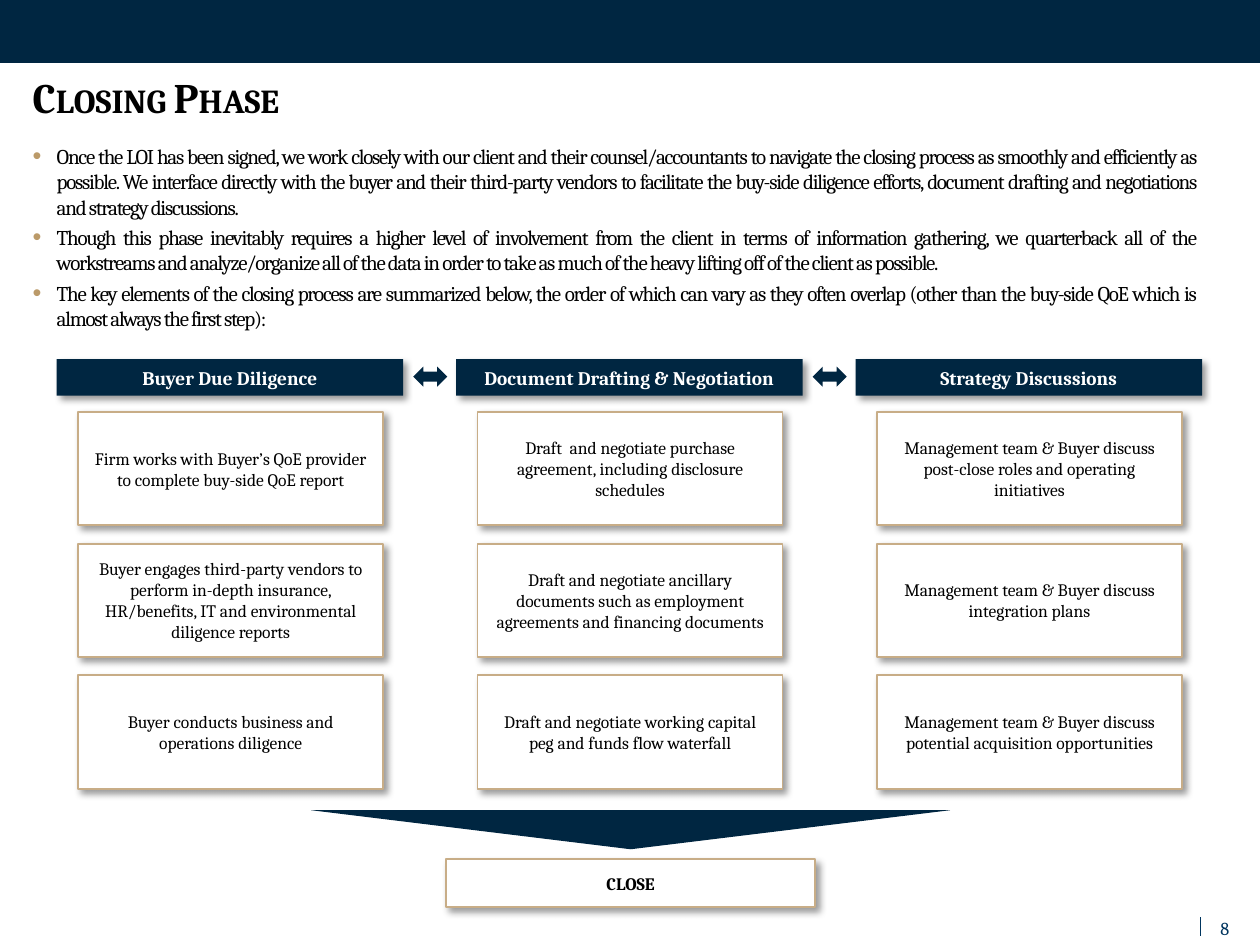
"""Build the closing phase slide on a grid of 100 columns by 75 rows."""
from dataclasses import dataclass

from lxml import etree
from pptx import Presentation
from pptx import util as u
from pptx.dml.color import RGBColor
from pptx.enum import shapes, text
from pptx.oxml.ns import qn

COLUMNS, ROWS = 100, 75
CELL = u.Inches(0.1)
PITCH_X, PITCH_Y = 31.7, 10.45

BULLETS = [
    "Once the LOI has been signed, we work closely with our client and their counsel/accountants to navigate "
    "the closing process as smoothly and efficiently as possible. We interface directly with the buyer and "
    "their third-party vendors to facilitate the buy-side diligence efforts, document drafting and "
    "negotiations and strategy discussions.",
    "Though this phase inevitably requires a higher level of involvement from the client in terms of "
    "information gathering, we quarterback all of the workstreams and analyze/organize all of the data in "
    "order to take as much of the heavy lifting off of the client as possible.",
    "The key elements of the closing process are summarized below, the order of which can vary as they often "
    "overlap (other than the buy-side QoE which is almost always the first step):",
]
WORKSTREAMS = {
    "Buyer Due Diligence": [
        "Firm works with Buyer’s QoE provider to complete buy-side QoE report",
        "Buyer engages third-party vendors to perform in-depth insurance, HR/benefits, IT and environmental "
        "diligence reports",
        "Buyer conducts business and operations diligence",
    ],
    "Document Drafting & Negotiation": [
        "Draft  and negotiate purchase agreement, including disclosure schedules",
        "Draft and negotiate ancillary documents such as employment agreements and financing documents",
        "Draft and negotiate working capital peg and funds flow waterfall",
    ],
    "Strategy Discussions": [
        "Management team & Buyer discuss post-close roles and operating initiatives",
        "Management team & Buyer discuss integration plans",
        "Management team & Buyer discuss potential acquisition opportunities",
    ],
}


@dataclass(frozen=True)
class Theme:
    """Colours, font and type sizes of the slide."""
    navy: str = "002641"
    blue: str = "00355F"
    gold: str = "BB9A69"
    tan: str = "C8AD87"
    white: str = "FFFFFF"
    black: str = "000000"
    font: str = "Cambria"
    title: float = 24
    body: float = 12
    header: float = 11
    number: float = 10.5
    step: float = 10


THEME = Theme()


def cells(*counts):
    """Turn counts of grid cells into lengths."""
    return [u.Emu(round(count * CELL)) for count in counts]


def apply(target, formats):
    """Set every attribute named in a dict of format values."""
    for name, value in formats.items():
        setattr(target, name, value)


def add_child(parent, tag, **attributes):
    """Append a DrawingML element with attributes."""
    child = etree.SubElement(parent, qn(f"a:{tag}"))
    for name, value in attributes.items():
        child.set(name, str(value))
    return child


def add_span(para, words, size, colour, bold=False):
    """Add one formatted run to a paragraph."""
    span = para.add_run()
    span.text = words
    apply(span.font, {"name": THEME.font, "size": u.Pt(size), "bold": bold})
    span.font.color.rgb = RGBColor.from_string(colour)
    return span


def set_frame(frame, anchor, inset=None):
    """Set wrapping, anchor and equal insets of a text frame."""
    apply(frame, {"word_wrap": True, "auto_size": text.MSO_AUTO_SIZE.NONE, "vertical_anchor": anchor})
    if inset is not None:
        sides = ("margin_left", "margin_top", "margin_right", "margin_bottom")
        apply(frame, dict.fromkeys(sides, u.Inches(inset)))


def place(holder, *bounds):
    """Move a placeholder to bounds given in grid cells."""
    apply(holder, dict(zip(("left", "top", "width", "height"), cells(*bounds))))


def add_title(page, words):
    """Fill the title placeholder in small capitals."""
    holder = page.shapes.title
    place(holder, 2.1, 5.6, 91.4, 4.9)
    set_frame(holder.text_frame, text.MSO_ANCHOR.TOP, 0.05)
    para = holder.text_frame.paragraphs[0]
    apply(para, {"alignment": text.PP_ALIGN.LEFT, "line_spacing": 0.9})
    span = add_span(para, words, THEME.title, THEME.black, True)
    span.font._element.set("cap", "small")


def add_bullets(page, items):
    """Fill the body placeholder with justified bullets."""
    holder = page.placeholders[1]
    place(holder, 2.1, 10.9, 93.4, 56.4)
    frame = holder.text_frame
    set_frame(frame, text.MSO_ANCHOR.TOP, 0.05)
    for index, words in enumerate(items):
        para = frame.add_paragraph() if index else frame.paragraphs[0]
        properties = para._p.get_or_add_pPr()
        indent = u.Inches(0.19)
        properties.set("marL", str(indent))
        properties.set("indent", str(-indent))
        add_child(add_child(properties, "buClr"), "srgbClr", val=THEME.gold)
        add_child(properties, "buSzPct", val=120000)
        add_child(properties, "buFont", typeface="Arial")
        add_child(properties, "buChar", char="•")
        apply(para, {"alignment": text.PP_ALIGN.JUSTIFY, "space_before": u.Pt(3 if index else 0)})
        span = add_span(para, words, THEME.body, THEME.black)
        span.font._element.set("spc", "-70")


def add_block(page, kind, bounds, fill=THEME.navy, line=None):
    """Add a flat preset shape."""
    block = page.shapes.add_shape(kind, *cells(*bounds))
    block.shadow.inherit = False
    block.fill.solid()
    block.fill.fore_color.rgb = RGBColor.from_string(fill)
    if line:
        block.line.color.rgb = RGBColor.from_string(line)
        block.line.width = u.Pt(1)
    else:
        block.line.fill.background()
    return block


def add_card(page, bounds, words, size, colour, fill, line=None, bold=False, inset=None):
    """Add a rectangle with centred text and a soft shadow."""
    card = add_block(page, shapes.MSO_SHAPE.RECTANGLE, bounds, fill, line)
    effects = card._element.spPr.find(qn("a:effectLst"))
    shadow = add_child(effects, "outerShdw", blurRad=u.Pt(4), dist=u.Pt(3), dir=45 * 60000,
                       algn="tl", rotWithShape=0)
    add_child(add_child(shadow, "srgbClr", val=THEME.black), "alpha", val=40000)
    set_frame(card.text_frame, text.MSO_ANCHOR.MIDDLE, inset)
    para = card.text_frame.paragraphs[0]
    para.alignment = text.PP_ALIGN.CENTER
    add_span(para, words, size, colour, bold)


def add_step(page, bounds, words, bold=False):
    """Add a white card with a tan outline."""
    add_card(page, bounds, words, THEME.step, THEME.black, THEME.white, THEME.tan, bold)


def add_workstreams(page, streams):
    """Lay out headed columns of steps joined by double arrows."""
    for column, (header, steps) in enumerate(streams.items()):
        shift = column * PITCH_X
        add_card(page, (4.5 + shift, 28.5, 27.5, 2.9), header, THEME.header, THEME.white,
                 THEME.navy, bold=True, inset=0.05)
        for row, words in enumerate(steps):
            add_step(page, (6.2 + shift, 32.7 + row * PITCH_Y, 24.2, 9), words)
        if column:
            add_block(page, shapes.MSO_SHAPE.LEFT_RIGHT_ARROW, (1.1 + shift, 29.1, 2.7, 1.6))


def add_page_number(page, number):
    """Add the page number and the rule beside it."""
    rule = page.shapes.add_connector(shapes.MSO_CONNECTOR.STRAIGHT, *cells(95.3, 72.8, 95.3, 74.3))
    rule.line.color.rgb = RGBColor.from_string(THEME.blue)
    rule.line.width = u.Pt(0.75)
    add_child(rule._element.spPr, "effectLst")
    box = page.shapes.add_textbox(*cells(95, 72.4, 4.4, 2.4))
    set_frame(box.text_frame, text.MSO_ANCHOR.TOP)
    apply(box.text_frame, {"margin_top": u.Inches(0.04), "margin_bottom": u.Inches(0.04)})
    para = box.text_frame.paragraphs[0]
    para.alignment = text.PP_ALIGN.CENTER
    add_span(para, number, THEME.number, THEME.blue)


def main():
    """Build and save the deck."""
    deck = Presentation()
    apply(deck, {"slide_width": COLUMNS * CELL, "slide_height": ROWS * CELL})
    page = deck.slides.add_slide(deck.slide_layouts[1])
    add_block(page, shapes.MSO_SHAPE.RECTANGLE, (0, 0, COLUMNS, 5))
    add_page_number(page, "8")
    add_title(page, "Closing Phase")
    add_bullets(page, BULLETS)
    add_workstreams(page, WORKSTREAMS)
    funnel = add_block(page, shapes.MSO_SHAPE.ISOSCELES_TRIANGLE, (24.7, 64.3, 50.7, 3.1))
    funnel.rotation = 180
    add_step(page, (35.4, 68.2, 29.3, 3.8), "CLOSE", bold=True)
    deck.save("out.pptx")


if __name__ == "__main__":
    main()
